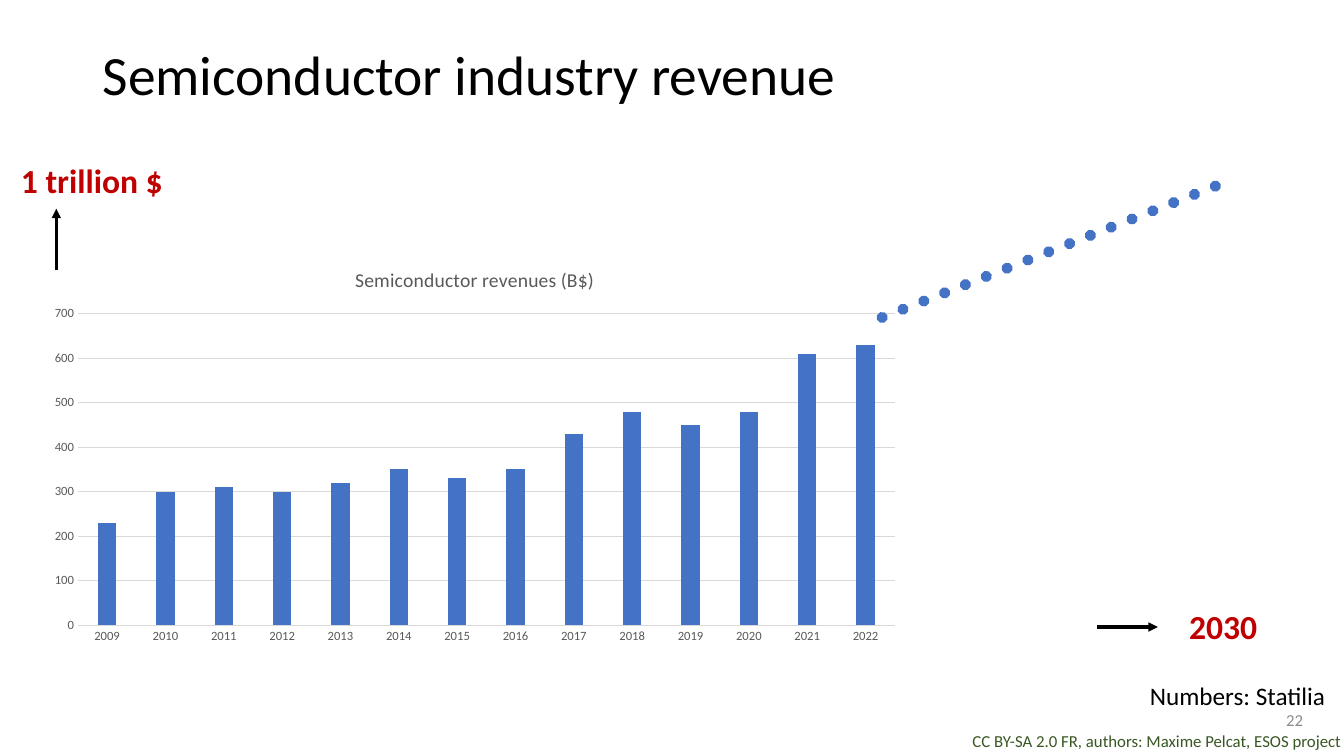
"""Build the semiconductor revenue slide with its projection to 2030."""
from collections import namedtuple

from lxml import etree
from pptx import Presentation
from pptx import util as u
from pptx.chart.data import CategoryChartData
from pptx.dml.color import RGBColor
from pptx.enum import chart as charts, dml, shapes, text
from pptx.oxml.ns import qn

BLACK = RGBColor(0x00, 0x00, 0x00)
BLUE = RGBColor(0x44, 0x72, 0xC4)
RED = RGBColor(0xC0, 0x00, 0x00)
GREEN = RGBColor(0x38, 0x57, 0x23)
GREY = RGBColor(0x59, 0x59, 0x59)
PALE_GREY = RGBColor(0x8C, 0x8C, 0x8C)
GRID_GREY = RGBColor(0xD9, 0xD9, 0xD9)
FONT = "Calibri"

SERIES_NAME = "Semiconductor revenues (B$)"
FIRST_YEAR = 2009
REVENUES = (230, 300, 310, 300, 320, 350, 330, 350, 430, 480, 450, 480, 610, 630)

Box = namedtuple("Box", "left top width height")


def style_font(font, size, color, bold=False):
    """Give a font its face, size, colour and weight."""
    font.name = FONT
    font.size = u.Pt(size)
    font.color.rgb = color
    font.bold = bold


def add_label(slide, box, wording, size, color, bold=False, wrap=False,
              align=text.PP_ALIGN.LEFT, anchor=text.MSO_ANCHOR.TOP):
    """Place one line of text in the box and return its paragraph."""
    shape = slide.shapes.add_textbox(*(u.Cm(length) for length in box))
    frame = shape.text_frame
    frame.word_wrap = wrap
    frame.vertical_anchor = anchor
    paragraph = frame.paragraphs[0]
    paragraph.alignment = align
    run = paragraph.add_run()
    run.text = wording
    style_font(run.font, size, color, bold)
    return paragraph


def add_line(slide, start, end, color, width):
    """Draw a straight line without shadow between two points."""
    connector = slide.shapes.add_connector(
        shapes.MSO_CONNECTOR.STRAIGHT, *(u.Cm(length) for length in start + end))
    connector.line.color.rgb = color
    connector.line.width = u.Pt(width)
    etree.SubElement(connector._element.spPr, qn("a:effectLst"))
    return connector


def add_arrow(slide, start, end):
    """Draw a black arrow that points at its end."""
    connector = add_line(slide, start, end, BLACK, 2.25)
    outline = connector.line._get_or_add_ln()
    etree.SubElement(outline, qn("a:tailEnd"), type="triangle")


def add_title(slide, box):
    """Write the slide title in the box."""
    paragraph = add_label(slide, box, "Semiconductor industry revenue", 39.6, BLACK,
                          wrap=True, anchor=text.MSO_ANCHOR.MIDDLE)
    paragraph.line_spacing = 0.9


def style_axis(axis):
    """Give an axis its small grey labels and no tick marks."""
    style_font(axis.tick_labels.font, 9, GREY)
    axis.major_tick_mark = charts.XL_TICK_MARK.NONE
    axis.minor_tick_mark = charts.XL_TICK_MARK.NONE


def add_revenue_chart(slide, box):
    """Draw the yearly revenue columns in the box."""
    data = CategoryChartData()
    data.categories = [str(FIRST_YEAR + index) for index in range(len(REVENUES))]
    data.add_series(SERIES_NAME, REVENUES)
    chart = slide.shapes.add_chart(
        charts.XL_CHART_TYPE.COLUMN_CLUSTERED,
        *(u.Cm(length) for length in box), data).chart
    style_font(chart.font, 10, BLACK)
    chart.has_legend = False
    chart.has_title = True
    run = chart.chart_title.text_frame.paragraphs[0].add_run()
    run.text = SERIES_NAME
    style_font(run.font, 14, GREY)

    plot = chart.plots[0]
    plot.gap_width = 219
    plot.overlap = -27
    plot.vary_by_categories = False
    fill = plot.series[0].format.fill
    fill.solid()
    fill.fore_color.rgb = BLUE

    years, amounts = chart.category_axis, chart.value_axis
    style_axis(years)
    style_axis(amounts)
    amounts.minimum_scale, amounts.maximum_scale, amounts.major_unit = 0, 700, 100
    amounts.format.line.fill.background()
    for line in (years.format.line, amounts.major_gridlines.format.line):
        line.color.rgb = GRID_GREY
        line.width = u.Pt(0.75)


def add_projection(slide, box):
    """Draw the dotted trend rising from the box's lower left to its upper right."""
    trend = add_line(slide, (box.left, box.top + box.height),
                     (box.left + box.width, box.top), BLUE, 8)
    trend.line.dash_style = dml.MSO_LINE.ROUND_DOT
    trend.line._get_or_add_ln().set("cap", "rnd")


def add_revenue_target(slide, box):
    """Write the revenue target at the top of the box, with an arrow up to it."""
    add_label(slide, box._replace(height=1.27), "1 trillion $", 24, RED, bold=True)
    arrow_left = box.left + 1.14
    add_arrow(slide, (arrow_left, box.top + box.height), (arrow_left, box.top + 1.35))


def add_year_target(slide, box):
    """Write the target year at the right of the box, with an arrow towards it."""
    label_width = 2.24
    label_left = box.left + box.width - label_width
    add_label(slide, box._replace(left=label_left, width=label_width),
              "2030", 24, RED, bold=True)
    arrow_top = box.top + 0.66
    add_arrow(slide, (box.left, arrow_top), (label_left - 0.54, arrow_top))


def add_footer(slide, box):
    """Stack the source, slide number and licence at the right of the box."""
    right = box.left + box.width
    add_label(slide, Box(right - 5.33, box.top, 5.13, 1.02),
              "Numbers: Statilia", 18, BLACK)
    add_label(slide, Box(right - 3, box.top + 0.61, 2.03, 1.02), "22", 12, PALE_GREY,
              wrap=True, align=text.PP_ALIGN.RIGHT, anchor=text.MSO_ANCHOR.MIDDLE)
    add_label(slide, Box(box.left, box.top + 1.27, box.width, 0.76),
              "CC BY-SA 2.0 FR, authors: Maxime Pelcat, ESOS project", 12, GREEN,
              align=text.PP_ALIGN.RIGHT)


def main():
    """Create the presentation and save it."""
    presentation = Presentation()
    presentation.slide_width = u.Cm(33.87)
    presentation.slide_height = u.Cm(19.05)
    slide = presentation.slides.add_slide(presentation.slide_layouts[6])
    add_title(slide, Box(2.34, 1.02, 29.21, 1.85))
    add_revenue_chart(slide, Box(0.94, 6.27, 22.05, 10.16))
    add_projection(slide, Box(22.23, 4.6, 8.63, 3.4))
    add_year_target(slide, Box(27.64, 15.14, 4.32, 1.27))
    add_revenue_target(slide, Box(0.28, 3.91, 4.11, 2.9))
    add_footer(slide, Box(22.66, 17.02, 11.4, 2.03))
    presentation.save("out.pptx")


if __name__ == "__main__":
    main()
